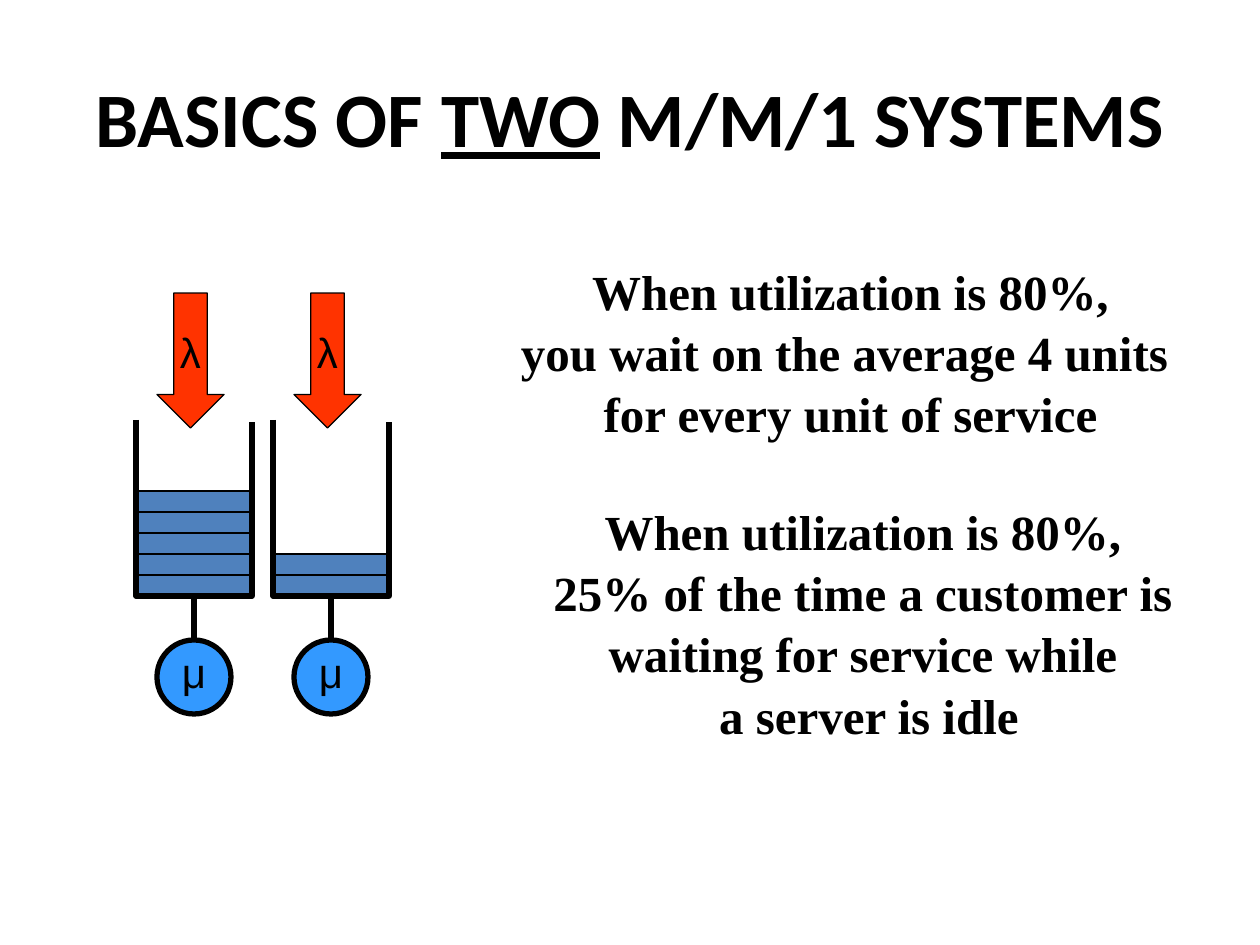
import pptx
import pptx.util
import pptx.dml.color
import pptx.enum.shapes
import pptx.enum.text
import pptx.oxml

# Content
TITLE = [("BASICS OF ", False), ("TWO", True), (" M/M/1 SYSTEMS", False)]
QUEUES = [{"arrival": "λ", "service": "μ", "waiting": 5},
          {"arrival": "λ", "service": "μ", "waiting": 2}]
REMARKS = [
    {"box": (508, 253, 685, 239), "wrap": True,
     "lines": ["When utilization is 80%,",
               "you wait on the average 4 units ",
               "for every unit of service"]},
    {"box": (540, 493, 658, 248), "wrap": False,
     "lines": ["When utilization is 80%, ",
               "25% of the time a customer is ",
               "waiting for service while ",
               "a server is idle"]},
]

# Layout in px
TITLE_BOX = (63, 38, 1134, 158)
QUEUE_LEFT, QUEUE_PITCH = 136, 137
TANK_WIDTH, TANK_TOP, TANK_BOTTOM = 116, 420, 596
CUSTOMER_HEIGHT = 21
ARROW_INSET, ARROW_TOP, ARROW_WIDTH, ARROW_HEIGHT = 21, 293, 67, 135
SERVER_TOP, SERVER_SIZE = 640, 74
LABEL_WIDTH, LABEL_HEIGHT = 49, 63

# Formats
BLACK, CUSTOMER, ARROW, SERVER = "000000", "4F81BD", "FF3300", "3399FF"
TITLE_FONT = {"name": "Calibri", "size": pptx.util.Pt(44), "bold": True}
SYMBOL_FONT = {"name": "Arial", "size": pptx.util.Pt(24), "bold": False}
REMARK_FONT = {"name": "Times New Roman", "size": pptx.util.Pt(28), "bold": True}
SHAPES = pptx.enum.shapes.MSO_SHAPE
ANCHOR = pptx.enum.text.MSO_ANCHOR
CENTER = pptx.enum.text.PP_ALIGN.CENTER


def px(*lengths):
    return [round(length * 914400 / 126) for length in lengths]


def rgb(color):
    return pptx.dml.color.RGBColor.from_string(color)


def style_font(font, values):
    for key, value in values.items():
        setattr(font, key, value)
    font.color.rgb = rgb(BLACK)


def style_line(line, width):
    line.color.rgb = rgb(BLACK)
    line.width = pptx.util.Pt(width)


def add_filled(shapes, kind, box, color, width):
    shape = shapes.add_shape(kind, *px(*box))
    shape.shadow.inherit = False
    shape.fill.solid()
    shape.fill.fore_color.rgb = rgb(color)
    style_line(shape.line, width)
    return shape


def write_lines(shape, lines, font, wrap=False, anchor=ANCHOR.TOP, spacing=1.0):
    frame = shape.text_frame
    frame.word_wrap = wrap
    frame.vertical_anchor = anchor
    for number, text in enumerate(lines):
        paragraph = frame.add_paragraph() if number else frame.paragraphs[0]
        paragraph.alignment = CENTER
        paragraph.line_spacing = spacing
        run = paragraph.add_run()
        run.text = text
        style_font(run.font, font)


def add_queue(slide, left, queue):
    shapes = slide.shapes.add_group_shape().shapes
    right = left + TANK_WIDTH
    server_left = left + ARROW_INSET
    center = server_left + SERVER_SIZE / 2

    # Waiting customers, stacked from the bottom
    for place in range(1, queue["waiting"] + 1):
        top = TANK_BOTTOM - place * CUSTOMER_HEIGHT
        add_filled(shapes, SHAPES.RECTANGLE,
                   (left, top, TANK_WIDTH, CUSTOMER_HEIGHT), CUSTOMER, 1)

    # Arrivals
    arrow = add_filled(shapes, SHAPES.DOWN_ARROW,
                       (left + ARROW_INSET, ARROW_TOP, ARROW_WIDTH, ARROW_HEIGHT),
                       ARROW, 0.75)
    write_lines(arrow, [queue["arrival"]], SYMBOL_FONT, anchor=ANCHOR.MIDDLE)

    # Server and the line that feeds it
    feed = shapes.add_connector(pptx.enum.shapes.MSO_CONNECTOR.STRAIGHT,
                                *px(center, TANK_BOTTOM, center, SERVER_TOP))
    style_line(feed.line, 3)
    feed._element.spPr.append(pptx.oxml.parse_xml(
        '<a:effectLst xmlns:a='
        '"http://schemas.openxmlformats.org/drawingml/2006/main"/>'))
    server = add_filled(shapes, SHAPES.OVAL,
                        (server_left, SERVER_TOP, SERVER_SIZE, SERVER_SIZE), SERVER, 3)
    feed.end_connect(server, 0)

    # Open tank
    outline = shapes.build_freeform(*px(left, TANK_TOP))
    outline.add_line_segments(
        [px(left, TANK_BOTTOM), px(right, TANK_BOTTOM), px(right, TANK_TOP + 2)],
        close=False)
    tank = outline.convert_to_shape()
    tank.shadow.inherit = False
    tank.fill.background()
    style_line(tank.line, 3)

    # Service rate
    label = shapes.add_textbox(*px(center - LABEL_WIDTH / 2, SERVER_TOP,
                                   LABEL_WIDTH, LABEL_HEIGHT))
    write_lines(label, [queue["service"]], SYMBOL_FONT)


def main():
    deck = pptx.Presentation()
    deck.slide_width, deck.slide_height = px(1260, 945)
    slide = deck.slides.add_slide(deck.slide_layouts[5])

    # Title
    title = slide.shapes.title
    title.left, title.top, title.width, title.height = px(*TITLE_BOX)
    title.text_frame.vertical_anchor = ANCHOR.MIDDLE
    heading = title.text_frame.paragraphs[0]
    heading.alignment = CENTER
    for text, underline in TITLE:
        run = heading.add_run()
        run.text = text
        style_font(run.font, {**TITLE_FONT, "underline": underline})

    # Two separate queues
    for number, queue in enumerate(QUEUES):
        add_queue(slide, QUEUE_LEFT + number * QUEUE_PITCH, queue)

    # Remarks
    for remark in REMARKS:
        box = slide.shapes.add_textbox(*px(*remark["box"]))
        write_lines(box, remark["lines"], REMARK_FONT, wrap=remark["wrap"], spacing=1.04)

    deck.save("out.pptx")


if __name__ == "__main__":
    main()
